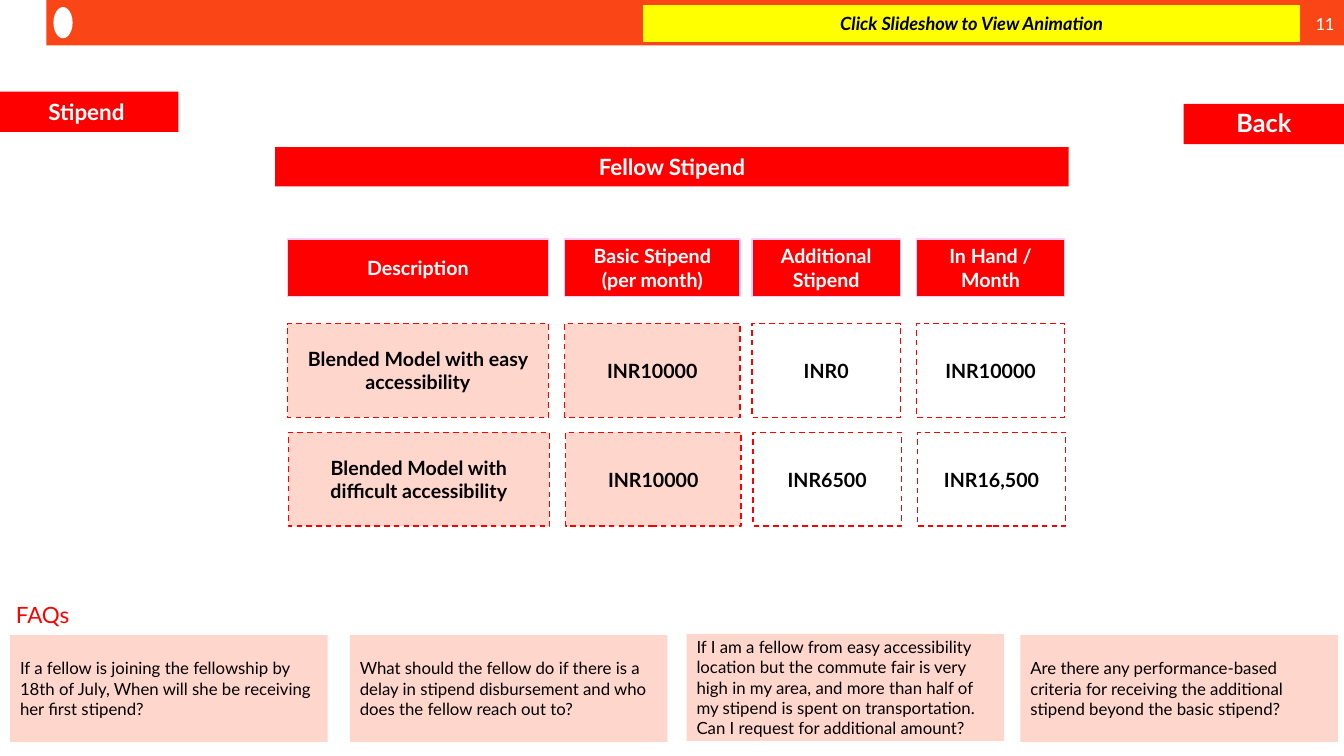
"""Build the fellow stipend slide with its rate grid and FAQs."""
from dataclasses import dataclass, field
from typing import Any, Optional

import pptx
import pptx.dml.color
import pptx.enum.dml
import pptx.enum.shapes
import pptx.enum.text
import pptx.util

Inches = pptx.util.Inches
Pt = pptx.util.Pt
RGBColor = pptx.dml.color.RGBColor
RECTANGLE = pptx.enum.shapes.MSO_SHAPE.RECTANGLE
OVAL = pptx.enum.shapes.MSO_SHAPE.OVAL
LEFT = pptx.enum.text.PP_ALIGN.LEFT
CENTER = pptx.enum.text.PP_ALIGN.CENTER
RIGHT = pptx.enum.text.PP_ALIGN.RIGHT

ORANGE = RGBColor(0xFA, 0x46, 0x16)
RED = RGBColor(0xFF, 0x00, 0x00)
PEACH = RGBColor(0xFF, 0xD6, 0xCC)
PINK = RGBColor(0xFF, 0xCC, 0xFF)
YELLOW = RGBColor(0xFF, 0xFF, 0x00)
WHITE = RGBColor(0xFF, 0xFF, 0xFF)
OFF_WHITE = RGBColor(0xFE, 0xFE, 0xFE)
BLACK = RGBColor(0x00, 0x00, 0x00)


@dataclass(frozen=True)
class Style:
    """Look of a panel and its text."""
    fill: Optional[RGBColor] = None
    line: Optional[RGBColor] = None
    dashed: bool = False
    color: RGBColor = BLACK
    align: Any = CENTER
    font: dict[str, Any] = field(default_factory=dict)
    spacing: Optional[float] = None


@dataclass(frozen=True)
class Panel:
    """One rectangle in inches with its wording."""
    left: float
    top: float
    width: float
    height: float
    style: Style
    text: str = ""


@dataclass(frozen=True)
class GridRow:
    """One row of the stipend grid."""
    top: float
    height: float
    shift: float
    styles: tuple[Style, ...]
    texts: tuple[str, ...]


TITLE_FONT = {"name": "Lato", "size": Pt(16), "bold": True}
CELL_FONT = {"name": "Lato", "size": Pt(14), "bold": True}
BAR = Style(fill=ORANGE)
EMBLEM = Style(fill=OFF_WHITE)
TITLE = Style(fill=RED, color=WHITE, font=TITLE_FONT)
BACK = Style(fill=RED, color=WHITE, font=TITLE_FONT | {"size": Pt(18)}, spacing=0.9)
HEADER = Style(fill=RED, line=PINK, color=WHITE, font=CELL_FONT)
SHADED = Style(fill=PEACH, line=RED, dashed=True, font=CELL_FONT)
PLAIN = Style(line=RED, dashed=True, font=CELL_FONT)
HINT = Style(fill=YELLOW, line=YELLOW, font=CELL_FONT | {"size": Pt(13), "italic": True})
QUESTION = Style(fill=PEACH, align=LEFT, font={"name": "Lato", "size": Pt(12)})
FAQ_LABEL = Style(color=RED, align=LEFT, font={"name": "Lato", "size": Pt(16)})
PAGE_NUMBER = Style(color=WHITE, align=RIGHT, font={"name": "Calibri", "size": Pt(13.3)})

BANNERS = (
    Panel(0.46, 0, 12.87, 0.45, BAR),
    Panel(2.73, 1.46, 7.87, 0.39, TITLE, "Fellow Stipend"),
    Panel(0, 0.91, 1.77, 0.4, TITLE, "Stipend "),
    Panel(11.74, 1.03, 1.59, 0.4, BACK, "Back"),
    Panel(6.38, 0.06, 6.51, 0.35, HINT, "Click Slideshow to View Animation"),
)
LABELS = (
    Panel(12.84, 0.06, 0.49, 0.33, PAGE_NUMBER, "11"),
    Panel(0.06, 5.8, 0.79, 0.59, FAQ_LABEL, "FAQs"),
)
LOGO_SPOT = Panel(0.53, 0.07, 0.19, 0.31, EMBLEM)

COLUMNS = ((2.85, 2.59), (5.6, 1.74), (7.46, 1.47), (9.09, 1.47))
BODY_STYLES = (SHADED, SHADED, PLAIN, PLAIN)
GRID = (
    GridRow(2.37, 0.57, 0, (HEADER,) * 4,
            ("Description", "Basic Stipend (per month)", "Additional Stipend", "In Hand / Month")),
    GridRow(3.21, 0.93, 0, BODY_STYLES,
            ("Blended Model with easy accessibility", "INR10000", "INR0", "INR10000")),
    GridRow(4.29, 0.93, 0.01, BODY_STYLES,
            ("Blended Model with difficult accessibility", "INR10000", "INR6500", "INR16,500")),
)
FAQS = (
    (0.1, 6.3, "If a fellow is joining the fellowship by 18th of July, "
               "When will she be receiving her first stipend?"),
    (3.47, 6.3, "What should the fellow do if there is a delay in stipend "
                "disbursement and who does the fellow reach out to?"),
    (6.81, 6.29, "If I am a fellow from easy accessibility location but the commute fair "
                 "is very high in my area, and more than half of my stipend is spent on "
                 "transportation. Can I request for additional amount?"),
    (10.12, 6.3, "Are there any performance-based criteria for receiving the "
                 "additional stipend beyond the basic stipend?"),
)


def bounds(panel: Panel) -> tuple[int, ...]:
    """Return the panel's place and size as lengths."""
    return tuple(Inches(v) for v in (panel.left, panel.top, panel.width, panel.height))


def write_text(frame: Any, panel: Panel) -> None:
    """Put the panel's wording in a text frame."""
    style = panel.style
    frame.word_wrap = True
    frame.vertical_anchor = pptx.enum.text.MSO_ANCHOR.MIDDLE
    paragraph = frame.paragraphs[0]
    paragraph.alignment = style.align
    paragraph.line_spacing = style.spacing
    run = paragraph.add_run()
    run.text = panel.text
    for attribute, value in style.font.items():
        setattr(run.font, attribute, value)
    run.font.color.rgb = style.color


def draw_panel(slide: Any, panel: Panel, outline: Any = RECTANGLE) -> None:
    """Draw a preset shape with its fill, border and wording."""
    style = panel.style
    shape = slide.shapes.add_shape(outline, *bounds(panel))
    shape.shadow.inherit = False
    if style.fill is None:
        shape.fill.background()
    else:
        shape.fill.solid()
        shape.fill.fore_color.rgb = style.fill
    if style.line is None:
        shape.line.fill.background()
    else:
        shape.line.color.rgb = style.line
        shape.line.width = Pt(1)
    if style.dashed:
        shape.line.dash_style = pptx.enum.dml.MSO_LINE.DASH
    if panel.text:
        write_text(shape.text_frame, panel)


def main() -> None:
    """Assemble and save the slide."""
    deck = pptx.Presentation()
    deck.slide_width, deck.slide_height = Inches(13.33), Inches(7.5)
    slide = deck.slides.add_slide(deck.slide_layouts[6])
    for banner in BANNERS:
        draw_panel(slide, banner)
    draw_panel(slide, LOGO_SPOT, OVAL)
    for row in GRID:
        for (left, width), style, text in zip(COLUMNS, row.styles, row.texts):
            draw_panel(slide, Panel(left + row.shift, row.top, width, row.height, style, text))
    for left, top, question in FAQS:
        draw_panel(slide, Panel(left, top, 3.15, 1.06, QUESTION, question))
    for label in LABELS:
        write_text(slide.shapes.add_textbox(*bounds(label)).text_frame, label)
    deck.save("out.pptx")


if __name__ == "__main__":
    main()
